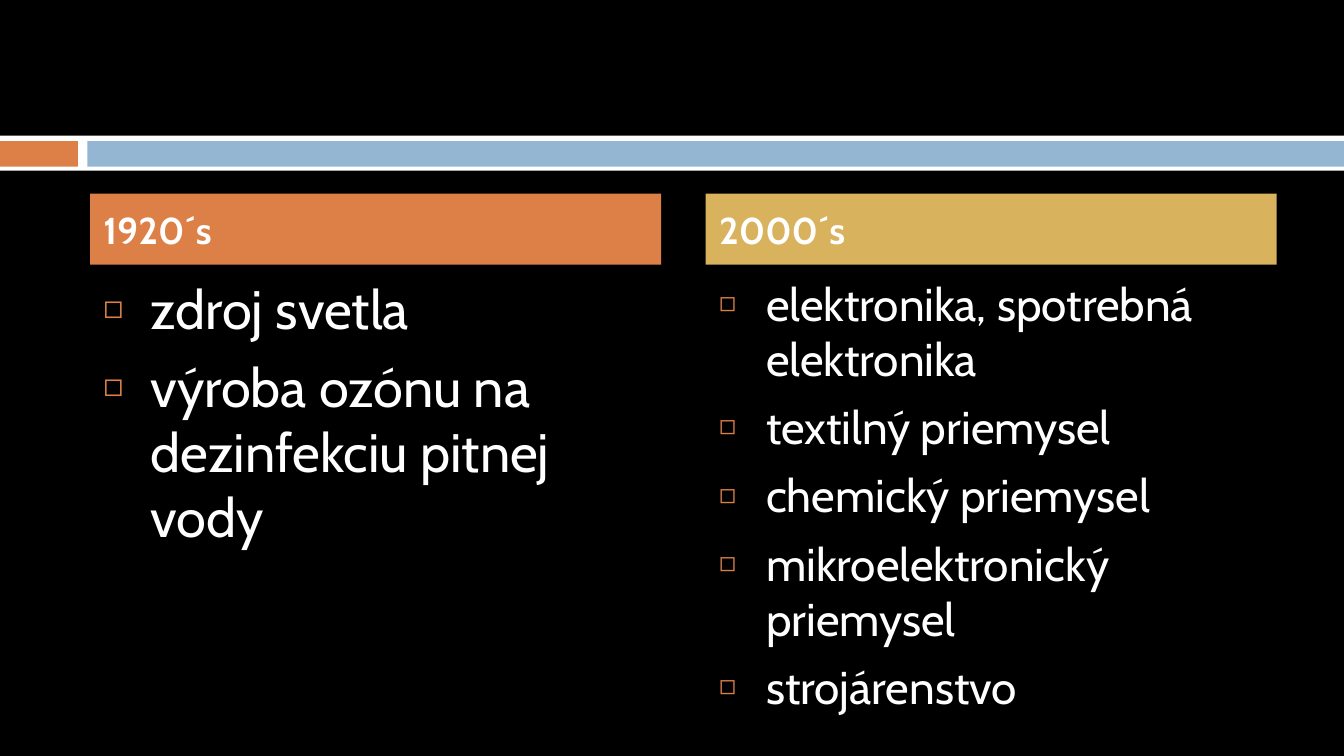
from lxml import etree
from pptx import Presentation, util as u
from pptx.dml.color import RGBColor
from pptx.enum import shapes, text
from pptx.oxml.ns import qn

BLACK = RGBColor(0x00, 0x00, 0x00)
WHITE = RGBColor(0xFF, 0xFF, 0xFF)
ORANGE = RGBColor(0xDD, 0x80, 0x47)
BLUE = RGBColor(0x94, 0xB6, 0xD2)
GOLD = RGBColor(0xD8, 0xB2, 0x5C)
FONT = "Cabin"

# Content: one entry per era
ERAS = [
    dict(heading="1920´s", color=ORANGE, size=29,
         uses=["zdroj svetla", "výroba ozónu na dezinfekciu pitnej vody"]),
    dict(heading="2000´s", color=GOLD, size=24.6,
         uses=["elektronika, spotrebná elektronika", "textilný priemysel",
               "chemický priemysel", "mikroelektronický priemysel",
               "strojárenstvo"]),
]

# Grid in inches, on a 16:9 slide
WIDTH = 10
HEIGHT = WIDTH * 9 / 16
LEFT, COLUMN, GUTTER = 0.67, 4.25, 0.33
HEADING_TOP, HEADING_HEIGHT = 1.44, 0.53
USES_TOP, USES_HEIGHT = 2, 2.94
BAND_TOP, BAND_HEIGHT = 1.01, 0.26
STRIPE_TOP, STRIPE_HEIGHT = 1.05, 0.19
TAB_WIDTH, STRIPE_LEFT = 0.58, 0.65
HANG = 0.35


def place(part, left, top, width, height):
    part.left, part.top = u.Inches(left), u.Inches(top)
    part.width, part.height = u.Inches(width), u.Inches(height)


def add_bar(slide, left, top, width, height, color):
    bar = slide.shapes.add_shape(
        shapes.MSO_SHAPE.RECTANGLE, *map(u.Inches, (left, top, width, height)))
    bar.shadow.inherit = False
    bar.fill.solid()
    bar.fill.fore_color.rgb = color
    bar.line.fill.background()


def add_bullet(paragraph):
    props = paragraph._p.get_or_add_pPr()
    props.set("marL", str(u.Inches(HANG)))
    props.set("indent", str(-u.Inches(HANG)))
    bullet_color = etree.SubElement(props, qn("a:buClr"))
    etree.SubElement(bullet_color, qn("a:srgbClr"), val=str(ORANGE))
    etree.SubElement(props, qn("a:buSzPct"), val="60000")
    etree.SubElement(props, qn("a:buChar"), char="◻")


def write(part, lines, size, bold=False, bullets=False,
          anchor=text.MSO_ANCHOR.TOP):
    frame = part.text_frame
    frame.text = "\n".join(lines)
    frame.word_wrap = True
    frame.auto_size = text.MSO_AUTO_SIZE.NONE
    frame.vertical_anchor = anchor
    for paragraph in frame.paragraphs:
        paragraph.space_before = u.Pt(7)
        paragraph.line_spacing = 1.0
        if bullets:
            add_bullet(paragraph)
        font = paragraph.runs[0].font
        font.name, font.size, font.bold = FONT, u.Pt(size), bold
        font.color.rgb = WHITE


def main():
    deck = Presentation()
    deck.slide_width, deck.slide_height = u.Inches(WIDTH), u.Inches(HEIGHT)
    slide = deck.slides.add_slide(deck.slide_layouts.get_by_name("Comparison"))
    slide.background.fill.solid()
    slide.background.fill.fore_color.rgb = BLACK

    # The slide has no title
    title = slide.shapes.title._element
    title.getparent().remove(title)

    # Band across the slide: white edge, orange tab, blue stripe
    add_bar(slide, 0, BAND_TOP, WIDTH, BAND_HEIGHT, WHITE)
    add_bar(slide, 0, STRIPE_TOP, TAB_WIDTH, STRIPE_HEIGHT, ORANGE)
    add_bar(slide, STRIPE_LEFT, STRIPE_TOP, WIDTH - STRIPE_LEFT,
            STRIPE_HEIGHT, BLUE)

    # One column per era: coloured heading over a bulleted list
    for column, era in enumerate(ERAS):
        left = LEFT + column * (COLUMN + GUTTER)
        heading = slide.placeholders[1 + 2 * column]
        uses = slide.placeholders[2 + 2 * column]

        place(heading, left, HEADING_TOP, COLUMN, HEADING_HEIGHT)
        heading.fill.solid()
        heading.fill.fore_color.rgb = era["color"]
        write(heading, [era["heading"]], 20, bold=True,
              anchor=text.MSO_ANCHOR.MIDDLE)

        place(uses, left, USES_TOP, COLUMN, USES_HEIGHT)
        write(uses, era["uses"], era["size"], bullets=True)

    deck.save("out.pptx")


if __name__ == "__main__":
    main()
